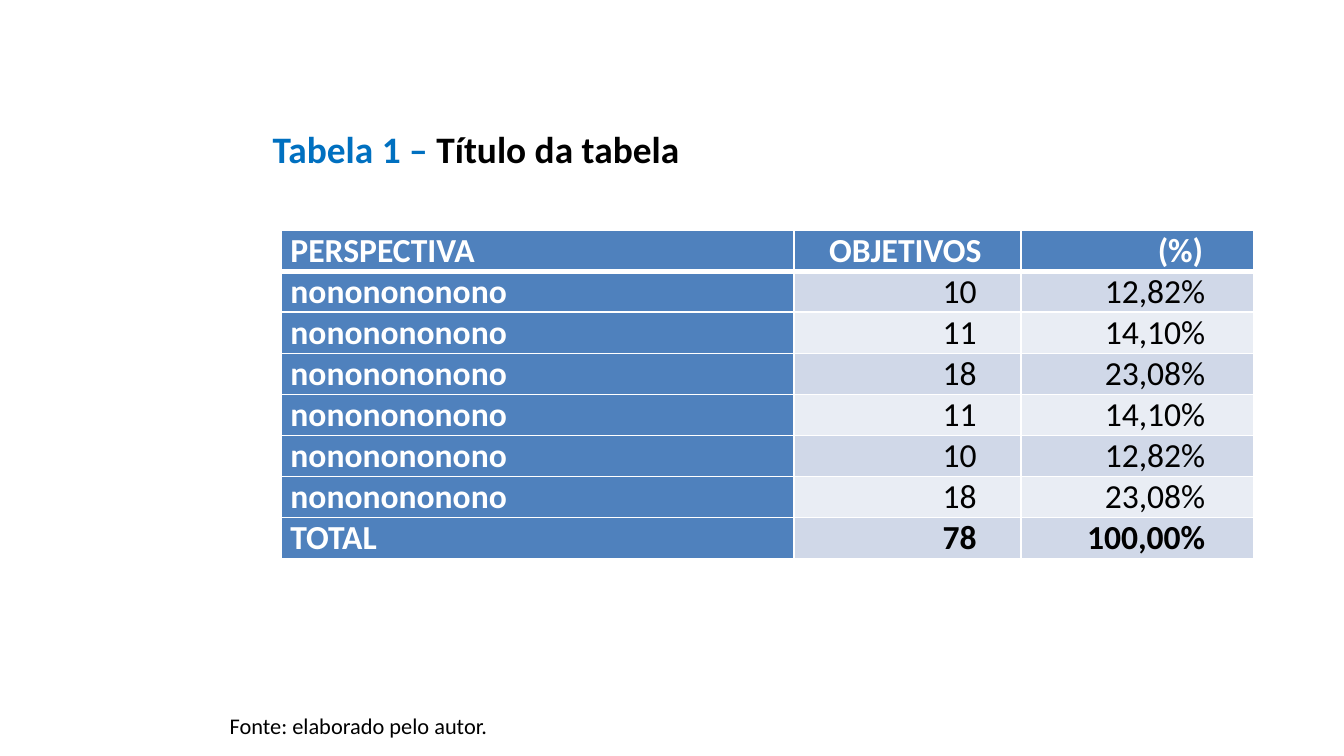
from lxml.etree import SubElement
from pptx import Presentation
from pptx.dml.color import RGBColor
from pptx.enum.text import MSO_ANCHOR as Anchor, PP_ALIGN as Align
from pptx.oxml.ns import qn
from pptx.util import Cm, Pt

BLUE, WHITE, BLACK, ACCENT = "4F81BD", "FFFFFF", "000000", "0070C0"
BANDS = ("D0D8E8", "E9EDF4")
COLUMN_WIDTHS = (9.7, 4.29, 4.39)
HEADER_INSETS = (0.18, 0.75, 0.95)
BODY_INSETS = (0.18, 0.84, 0.91)
HEADER = ("PERSPECTIVA", "OBJETIVOS", "(%)")
VALUES = (
    ("10", "12,82%"),
    ("11", "14,10%"),
    ("18", "23,08%"),
    ("11", "14,10%"),
    ("10", "12,82%"),
    ("18", "23,08%"),
)
TOTAL = ("TOTAL", "78", "100,00%")


def color(value):
    return RGBColor.from_string(value)


def format_span(span, size, shade, bold=False):
    span.font.name = "Calibri"
    span.font.size = Pt(size)
    span.font.bold = bold
    span.font.color.rgb = color(shade)


def add_border(cell, side, width):
    line = SubElement(cell._tc.get_or_add_tcPr(), qn(f"a:{side}"), w=str(Pt(width)))
    fill = SubElement(line, qn("a:solidFill"))
    SubElement(fill, qn("a:srgbClr"), val=WHITE)


def place_title(page, left, top, width, height):
    title = page.shapes.title
    title.left, title.top, title.width, title.height = map(Cm, (left, top, width, height))
    frame = title.text_frame
    frame.word_wrap = False
    frame.vertical_anchor = Anchor.TOP
    para = frame.paragraphs[0]
    para.alignment = Align.LEFT
    for text, shade in (("Tabela 1 – ", ACCENT), ("Título da tabela", BLACK)):
        span = para.add_run()
        span.text = text
        format_span(span, 20, shade, True)


def fill_cell(cell, text, row, column, last_row):
    is_header, is_label = row == 0, column == 0
    insets = HEADER_INSETS if is_header else BODY_INSETS
    cell.margin_left, cell.margin_right = Cm(0.18), Cm(insets[column])
    cell.margin_top = cell.margin_bottom = 0
    cell.vertical_anchor = Anchor.TOP if is_header or is_label else Anchor.BOTTOM
    add_border(cell, "lnL", 1)
    add_border(cell, "lnR", 1)
    add_border(cell, "lnT", 3 if row == 1 else 1)
    add_border(cell, "lnB", 3 if is_header else 1)
    solid = is_header or is_label
    cell.fill.solid()
    cell.fill.fore_color.rgb = color(BLUE if solid else BANDS[(row - 1) % 2])
    para = cell.text_frame.paragraphs[0]
    para.text = text
    para.alignment = Align.LEFT if is_label else Align.RIGHT
    format_span(para.runs[0], 18, WHITE if solid else BLACK, solid or row == last_row)


def place_table(page, left, top, width, height):
    rows = [HEADER, *(("nononononono", *pair) for pair in VALUES), TOTAL]
    table = page.shapes.add_table(
        len(rows), len(HEADER), Cm(left), Cm(top), Cm(width), Cm(height)
    ).table
    for column, column_width in zip(table.columns, COLUMN_WIDTHS):
        column.width = Cm(column_width)
    for row, texts in enumerate(rows):
        for column, text in enumerate(texts):
            fill_cell(table.cell(row, column), text, row, column, len(rows) - 1)


def place_source_note(page, left, top, width, height):
    box = page.shapes.add_textbox(Cm(left), Cm(top), Cm(width), Cm(height))
    box.text_frame.word_wrap = True
    box.text_frame.text = "Fonte: elaborado pelo autor."
    format_span(box.text_frame.paragraphs[0].runs[0], 12, BLACK)


def main():
    deck = Presentation()
    deck.slide_width, deck.slide_height = Cm(25.4), Cm(14.29)
    page = deck.slides.add_slide(deck.slide_layouts.get_by_name("Title Only"))
    place_table(page, 5.31, 4.35, sum(COLUMN_WIDTHS), 6.16)
    place_title(page, 4.9, 2.26, 8.25, 1.12)
    place_source_note(page, 4.09, 13.33, 12.7, 0.76)
    deck.save("out.pptx")


if __name__ == "__main__":
    main()
